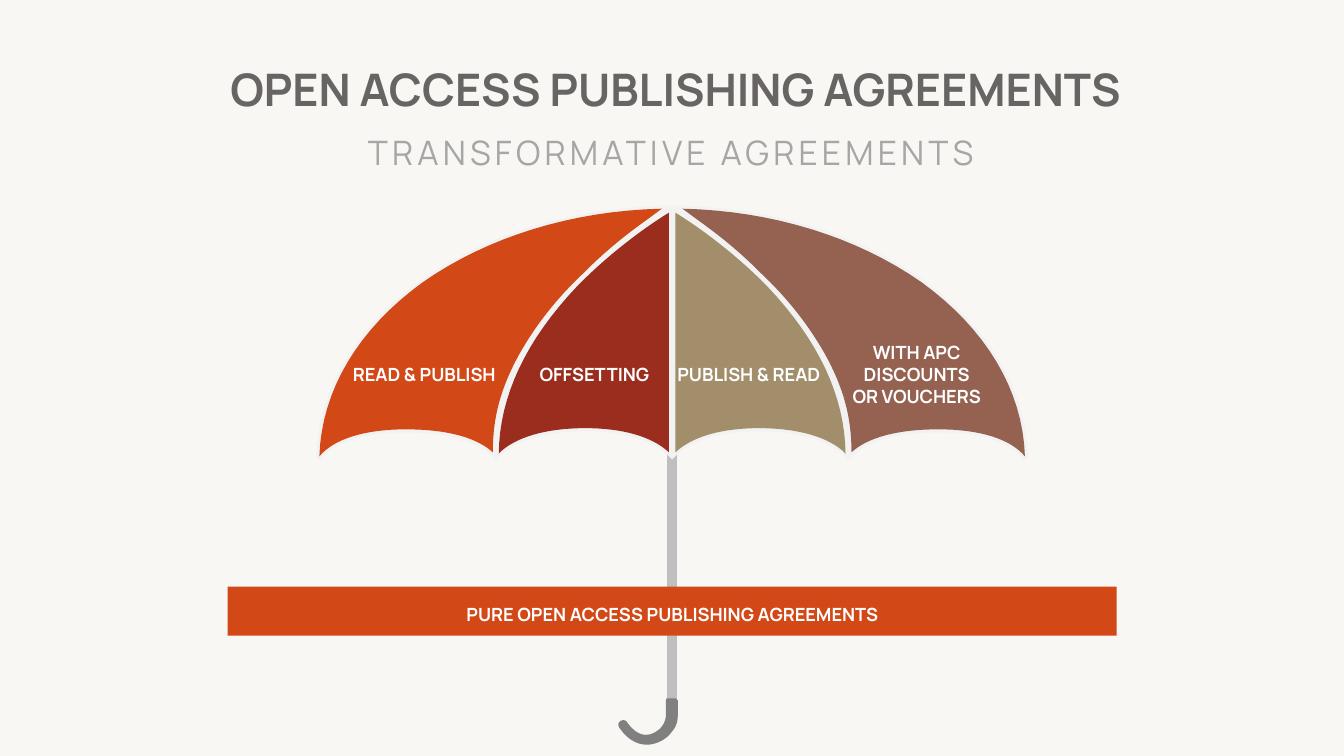
from pptx import Presentation
from pptx.dml.color import RGBColor
from pptx.enum.shapes import MSO_SHAPE as Shape
from pptx.enum.text import MSO_ANCHOR as Anchor, MSO_AUTO_SIZE as AutoSize, PP_ALIGN as Align
from pptx.util import Cm, Pt

COLORS = {
    "background": "F8F7F4", "title": "696464", "subtitle": "A6A6A6", "frame": "F2F2F2",
    "orange": "D34817", "red": "9B2D1F", "olive": "A28E6A", "brown": "956251",
    "shaft": "BFBFBF", "handle": "808080", "white": "FFFFFF",
}
FONT = "Manrope"
CANOPY_WIDTH = 17.94
CURVE_STEPS = 16

# Outlines are in centimetres: two numbers are a corner, six are a Bézier curve.
CANOPY_HALF = [
    (8.97, 0),
    (6.53, 0.03, 4.32, 0.69, 2.64, 1.88), (0.99, 3.07, 0.05, 4.65, 0, 6.32),
    (0.05, 6.4), (0.13, 6.38),
    (0.48, 5.94, 1.24, 5.72, 2.26, 5.72), (3.3, 5.72, 4.06, 5.92, 4.45, 6.35),
    (4.52, 6.43), (4.57, 6.38),
    (4.95, 5.94, 5.74, 5.69, 6.78, 5.69), (7.75, 5.69, 8.51, 5.92, 8.89, 6.32),
    (8.97, 6.4),
]
OUTER_PANEL = [
    (4.45, 6.22),
    (4.04, 5.84, 3.28, 5.64, 2.26, 5.64), (1.24, 5.64, 0.46, 5.87, 0.08, 6.32),
    (0.13, 4.65, 1.07, 3.1, 2.69, 1.93), (4.32, 0.79, 6.45, 0.13, 8.71, 0.08),
    (8.33, 0.36),
    (7.77, 0.76, 7.24, 1.19, 6.76, 1.68), (6.05, 2.34, 5.51, 3.05, 5.11, 3.76),
    (4.65, 4.6, 4.45, 5.33, 4.45, 6.22),
]
INNER_PANEL = [
    (8.89, 6.22),
    (8.46, 5.82, 7.72, 5.61, 6.78, 5.61), (5.79, 5.61, 5, 5.84, 4.6, 6.25),
    (4.62, 4.8, 5.28, 3.4, 6.58, 2.03), (7.52, 1.07, 8.51, 0.41, 8.89, 0.18),
]
HOOK = [
    (1.22, 0.43),
    (1.22, 0.56, 1.14, 0.71, 1.04, 0.79), (0.66, 1.09, 0.38, 0.79, 0.25, 0.61),
    (0.23, 0.56, 0.15, 0.53, 0.1, 0.56), (0.03, 0.58, 0, 0.66, 0.05, 0.74),
    (0.53, 1.45, 1.19, 1.12, 1.37, 0.84), (1.47, 0.74, 1.52, 0.58, 1.52, 0.46),
    (1.52, 0.05), (1.47, 0), (1.24, 0), (1.22, 0.05),
]


def color(name):
    """Return the named colour."""
    return RGBColor.from_string(COLORS[name])


def trace(outline):
    """Turn corners and curves into a list of points."""
    points = [outline[0]]
    for segment in outline[1:]:
        if len(segment) == 2:
            points.append(segment)
            continue
        controls = [points[-1], segment[:2], segment[2:4], segment[4:]]
        for step in range(1, CURVE_STEPS + 1):
            t = step / CURVE_STEPS
            weights = ((1 - t) ** 3, 3 * t * (1 - t) ** 2, 3 * t ** 2 * (1 - t), t ** 3)
            points.append(tuple(
                sum(weight * control[axis] for weight, control in zip(weights, controls))
                for axis in (0, 1)
            ))
    return points


def mirror(points):
    """Reflect points across the middle of the canopy."""
    return [(CANOPY_WIDTH - x, y) for x, y in points]


def paint(shape, fill):
    """Give a shape a flat fill without line or shadow."""
    shape.shadow.inherit = False
    shape.fill.solid()
    shape.fill.fore_color.rgb = color(fill)
    shape.line.fill.background()


def add_outline(slide, points, left, top, fill):
    """Draw a closed outline with its origin at left, top."""
    corners = [(Cm(left + x), Cm(top + y)) for x, y in points]
    builder = slide.shapes.build_freeform(*corners[0])
    builder.add_line_segments(corners[1:], close=True)
    paint(builder.convert_to_shape(), fill)


def add_bar(slide, left, top, width, height, fill):
    """Draw a plain rectangle."""
    box = (Cm(left), Cm(top), Cm(width), Cm(height))
    paint(slide.shapes.add_shape(Shape.RECTANGLE, *box), fill)


def write_text(shape, lines, size=13, fill="white", bold=True, spacing=0, anchor=Anchor.BOTTOM):
    """Fill a shape with centred lines of formatted text."""
    frame = shape.text_frame
    frame.word_wrap = False
    frame.auto_size = AutoSize.NONE
    frame.vertical_anchor = anchor
    for index, line in enumerate(lines):
        paragraph = frame.paragraphs[0] if index == 0 else frame.add_paragraph()
        paragraph.alignment = Align.CENTER
        paragraph.space_before = Pt(0)
        run = paragraph.add_run()
        run.text = line
        run.font.name = FONT
        run.font.size = Pt(size)
        run.font.bold = bold
        run.font.color.rgb = color(fill)
        if spacing:
            run._r.get_or_add_rPr().set("spc", str(spacing * 100))


def add_label(slide, lines, left, top, width, height):
    """Place a white label in the given box."""
    box = slide.shapes.add_textbox(Cm(left), Cm(top), Cm(width), Cm(height))
    write_text(box, lines)


def place(shape, left, top, width, height):
    """Move a placeholder to the given box."""
    shape.left, shape.top = Cm(left), Cm(top)
    shape.width, shape.height = Cm(width), Cm(height)


def add_headings(slide, left, top, width):
    """Set the title and the subtitle below it."""
    title, subtitle = slide.placeholders
    place(title, left, top, width, 1.63)
    write_text(title, ["OPEN ACCESS PUBLISHING AGREEMENTS"], size=32, fill="title",
               anchor=Anchor.TOP)
    place(subtitle, left, top + 1.78, width - 0.26, 1.27)
    write_text(subtitle, ["TRANSFORMATIVE AGREEMENTS"], size=24, fill="subtitle",
               bold=False, spacing=3, anchor=Anchor.TOP)


def add_umbrella(slide, left, top):
    """Draw the shaft, hook, canopy and panel labels."""
    add_bar(slide, left + 8.84, top + 5.89, 0.25, 6.96, "shaft")
    add_outline(slide, trace(HOOK), left + 7.59, top + 12.42, "handle")
    half = trace(CANOPY_HALF)
    add_outline(slide, half + mirror(half)[::-1], left, top, "frame")
    outer, inner = trace(OUTER_PANEL), trace(INNER_PANEL)
    panels = [(outer, "orange"), (inner, "red"), (mirror(inner), "olive"), (mirror(outer), "brown")]
    for points, fill in panels:
        add_outline(slide, points, left, top, fill)
    labels = [("READ & PUBLISH", 0.61, 4.22), ("OFFSETTING", 5.36, 3.3),
              ("PUBLISH & READ", 8.79, 4.22)]
    for text, offset, width in labels:
        add_label(slide, [text], left + offset, top + 3.84, width, 0.81)
    add_label(slide, ["WITH APC", "DISCOUNTS", "OR VOUCHERS"], left + 13.16, top + 3.28, 3.94, 1.93)


def add_base(slide, left, top, width, height):
    """Draw the banner across the shaft with its label."""
    add_bar(slide, left, top, width, height, "orange")
    add_label(slide, ["PURE OPEN ACCESS PUBLISHING AGREEMENTS"], left, top + 0.28, width, 0.81)


def main():
    """Build and save the slide."""
    presentation = Presentation()
    presentation.slide_width, presentation.slide_height = Cm(33.87), Cm(19.05)
    slide = presentation.slides.add_slide(presentation.slide_layouts[0])
    slide.background.fill.solid()
    slide.background.fill.fore_color.rgb = color("background")
    add_headings(slide, 0.2, 1.42, 33.67)
    add_umbrella(slide, 7.97, 5.18)
    add_base(slide, 5.74, 14.78, 22.4, 1.24)
    presentation.save("out.pptx")


if __name__ == "__main__":
    main()
